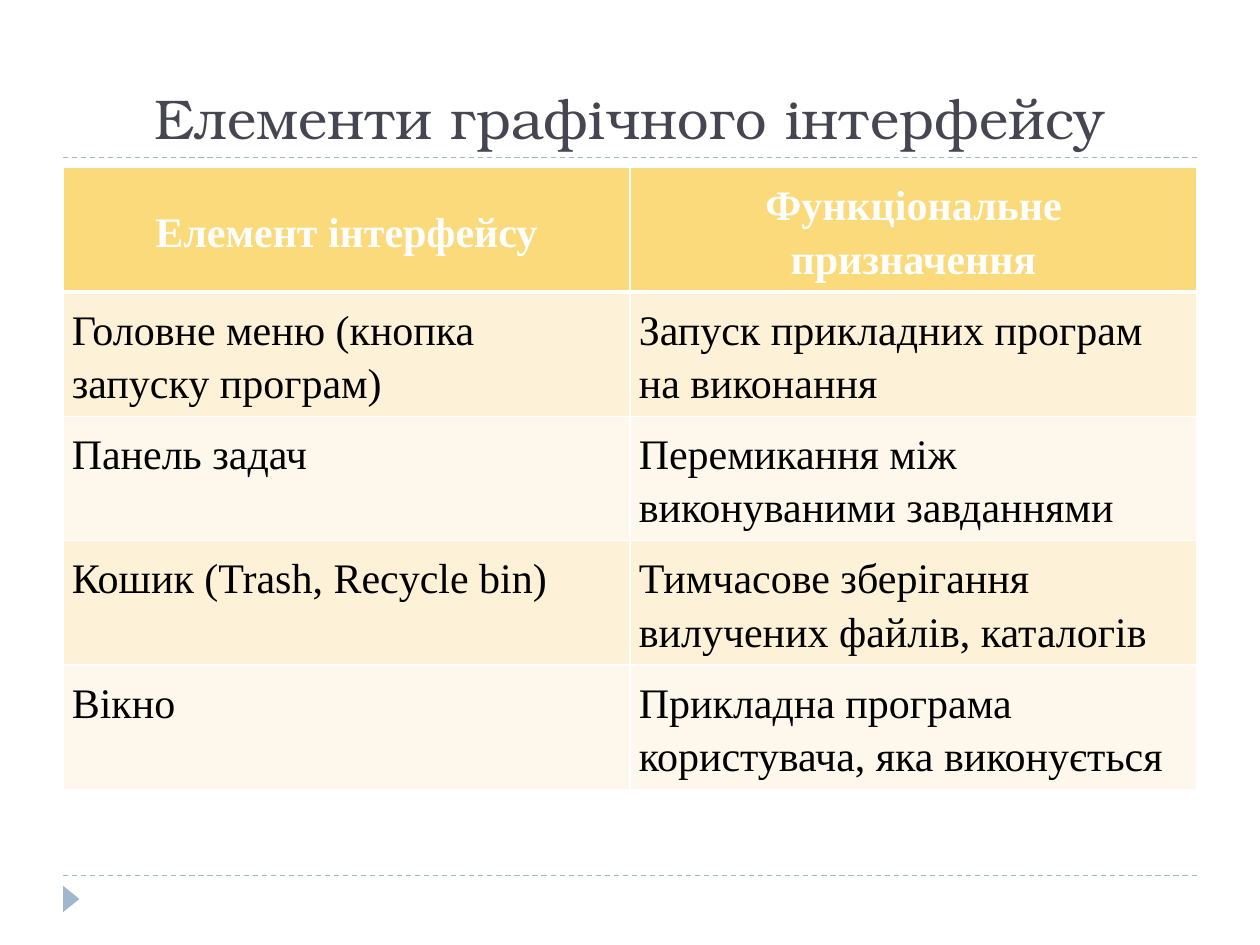
import dataclasses
import typing

import lxml.etree
import pptx
import pptx.dml.color
import pptx.enum.dml
import pptx.enum.shapes
import pptx.enum.text
import pptx.oxml.ns
import pptx.util

Inches = pptx.util.Inches
Pt = pptx.util.Pt
Align = pptx.enum.text.PP_ALIGN
Anchor = pptx.enum.text.MSO_ANCHOR

ACCENT = "9FB8CD"
WHITE = "FFFFFF"
LEFT, WIDTH = 0.5, 9
ROW_HEIGHT = 0.7


@dataclasses.dataclass
class Row:
    element: str
    purpose: str
    purpose_anchor: typing.Any = Anchor.MIDDLE


@dataclasses.dataclass
class CellStyle:
    fill: str
    color: str
    bold: bool
    align: typing.Any
    top_border: float = 1
    bottom_border: float = 1


HEADING = Row("Елемент інтерфейсу", "Функціональне призначення")
ROWS = [
    Row("Головне меню (кнопка запуску програм)",
        "Запуск прикладних програм на виконання", Anchor.TOP),
    Row("Панель задач", "Перемикання між виконуваними завданнями"),
    Row("Кошик (Trash, Recycle bin)",
        "Тимчасове зберігання вилучених файлів, каталогів"),
    Row("Вікно", "Прикладна програма користувача, яка виконується"),
]
BANDS = ["FDF1D7", "FEF8EC"]


def rgb(value: str) -> pptx.dml.color.RGBColor:
    return pptx.dml.color.RGBColor.from_string(value)


def apply(target: typing.Any, values: dict) -> None:
    for name, value in values.items():
        setattr(target, name, value)


def write(frame, text: str, paragraph_format: dict, font_format: dict, color: str) -> None:
    paragraph = frame.paragraphs[0]
    apply(paragraph, paragraph_format)
    run = paragraph.add_run()
    run.text = text
    apply(run.font, font_format)
    run.font.color.rgb = rgb(color)


def add_rule(slide, top: float) -> None:
    rule = slide.shapes.add_connector(
        pptx.enum.shapes.MSO_CONNECTOR.STRAIGHT,
        Inches(LEFT), Inches(top), Inches(LEFT + WIDTH), Inches(top))
    rule.line.color.rgb = rgb(ACCENT)
    apply(rule.line, {"width": Pt(0.75),
                      "dash_style": pptx.enum.dml.MSO_LINE.DASH})
    lxml.etree.SubElement(rule.element.spPr, pptx.oxml.ns.qn("a:effectLst"))


def add_marker(slide) -> None:
    marker = slide.shapes.add_shape(
        pptx.enum.shapes.MSO_SHAPE.ISOSCELES_TRIANGLE,
        Inches(0.46), Inches(7.07), Inches(0.21), Inches(0.13))
    marker.rotation = 90
    marker.shadow.inherit = False
    marker.fill.solid()
    marker.fill.fore_color.rgb = rgb(ACCENT)
    marker.line.fill.background()


def set_borders(cell, style: CellStyle) -> None:
    qn = pptx.oxml.ns.qn
    properties = cell._tc.get_or_add_tcPr()
    widths = {"L": 1, "R": 1, "T": style.top_border, "B": style.bottom_border}
    for side, width in widths.items():
        border = lxml.etree.SubElement(properties, qn(f"a:ln{side}"), w=str(Pt(width)))
        fill = lxml.etree.SubElement(border, qn("a:solidFill"))
        lxml.etree.SubElement(fill, qn("a:srgbClr"), val=WHITE)


def fill_cell(cell, text: str, anchor: typing.Any, style: CellStyle) -> None:
    margins = ("margin_left", "margin_right", "margin_top", "margin_bottom")
    apply(cell, {margin: Inches(0.07) for margin in margins})
    cell.vertical_anchor = anchor
    set_borders(cell, style)
    cell.fill.solid()
    cell.fill.fore_color.rgb = rgb(style.fill)
    write(cell.text_frame, text,
          {"alignment": style.align, "line_spacing": 1.15, "space_after": Pt(10)},
          {"name": "Times New Roman", "size": Pt(24), "bold": style.bold},
          style.color)


def add_elements_table(slide) -> None:
    row_count = len(ROWS) + 1
    table = slide.shapes.add_table(
        row_count, 2, Inches(LEFT), Inches(1.33),
        Inches(WIDTH), Inches(ROW_HEIGHT * row_count)).table
    heading_style = CellStyle("FADA7A", WHITE, True, Align.CENTER, bottom_border=3)
    for column, text in enumerate((HEADING.element, HEADING.purpose)):
        fill_cell(table.cell(0, column), text, Anchor.MIDDLE, heading_style)
    for index, row in enumerate(ROWS):
        style = CellStyle(BANDS[index % 2], "000000", False, Align.LEFT,
                          top_border=1 if index else 3)
        fill_cell(table.cell(index + 1, 0), row.element, Anchor.TOP, style)
        fill_cell(table.cell(index + 1, 1), row.purpose, row.purpose_anchor, style)


def add_title(slide) -> None:
    title = slide.shapes.title
    apply(title, {"left": Inches(LEFT), "top": Inches(0.17),
                  "width": Inches(WIDTH), "height": Inches(1.08)})
    apply(title.text_frame, {"vertical_anchor": Anchor.BOTTOM, "word_wrap": True})
    write(title.text_frame, "Елементи графічного інтерфейсу",
          {"alignment": Align.CENTER},
          {"name": "TeX Gyre Bonum", "size": Pt(32)}, "464653")


def main() -> None:
    deck = pptx.Presentation()
    apply(deck, {"slide_width": Inches(10), "slide_height": Inches(7.5)})
    slide = deck.slides.add_slide(deck.slide_layouts[5])
    for top in (6.95, 1.25):
        add_rule(slide, top)
    add_marker(slide)
    add_title(slide)
    add_elements_table(slide)
    deck.save("out.pptx")


if __name__ == "__main__":
    main()
